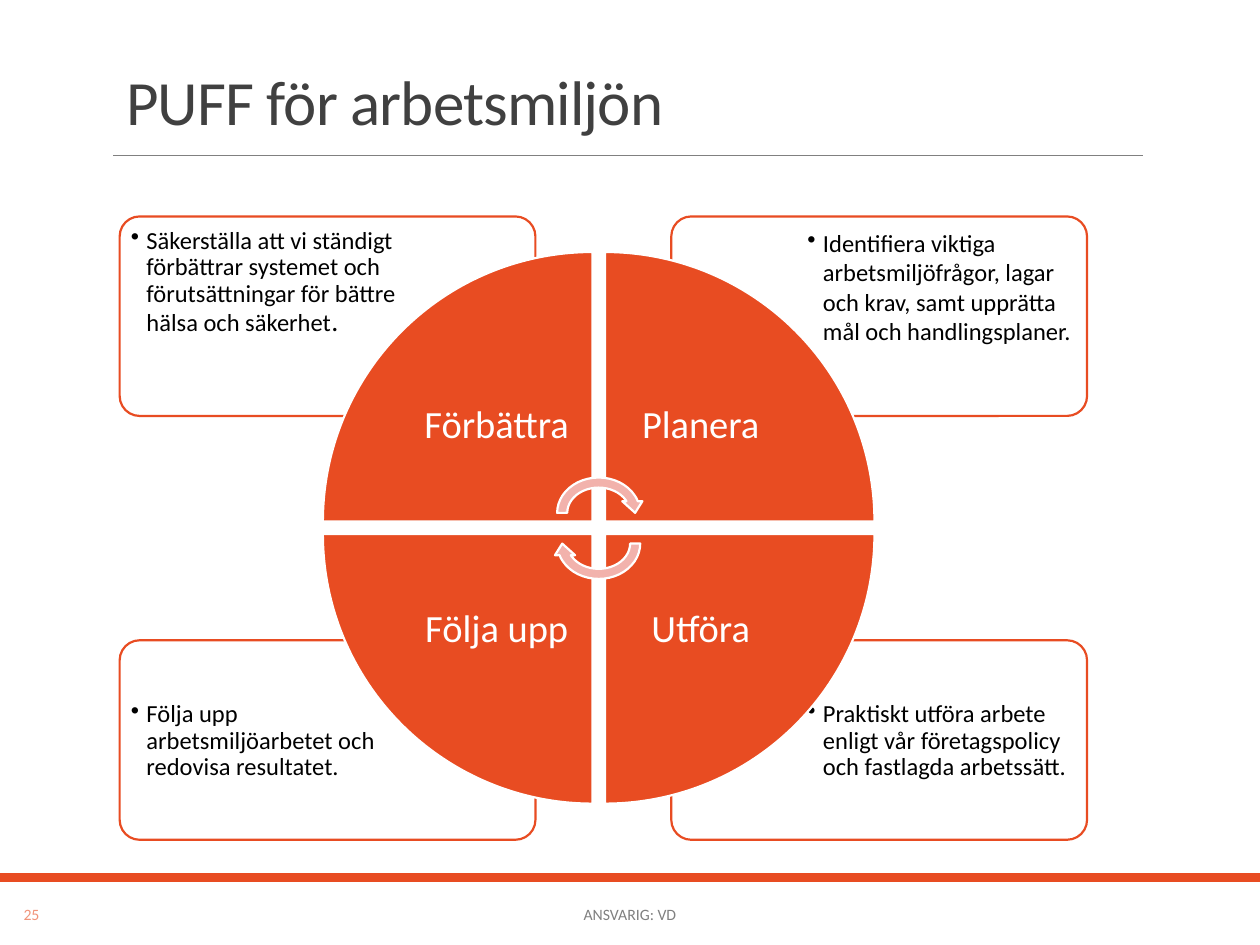
from lxml import etree
from pptx import Presentation
from pptx.dml.color import RGBColor
from pptx.enum import shapes, text
from pptx.oxml import ns
from pptx.util import Pt

ORANGE = RGBColor(0xE8, 0x4C, 0x22)
PEACH = RGBColor(0xF1, 0x94, 0x7A)
PINK = RGBColor(0xF2, 0xB2, 0xAC)
WHITE = RGBColor(0xFF, 0xFF, 0xFF)
BLACK = RGBColor(0, 0, 0)
DARK = RGBColor(0x40, 0x40, 0x40)
GREY = RGBColor(0x80, 0x80, 0x80)
FONT = "Calibri"
KIND = shapes.MSO_SHAPE
MIDDLE = text.MSO_ANCHOR.MIDDLE
CENTER = text.PP_ALIGN.CENTER

TITLE = "PUFF för arbetsmiljön"
# name, column, row, rotation, line spacing, runs of (words, size)
STEPS = [
    ("Förbättra", 0, 0, 0, 0.9,
     [("Säkerställa att vi ständigt förbättrar systemet och "
       "förutsättningar för bättre hälsa och säkerhet", 14), (".", 16)]),
    ("Planera", 1, 0, 90, 1.0,
     [("Identifiera viktiga arbetsmiljöfrågor, lagar och krav, "
       "samt upprätta mål och handlingsplaner.", 14)]),
    ("Utföra", 1, 1, 180, 0.9,
     [("Praktiskt utföra arbete enligt vår företagspolicy "
       "och fastlagda arbetssätt.", 14)]),
    ("Följa upp", 0, 1, 270, 0.9,
     [("Följa upp arbetsmiljöarbetet och redovisa resultatet.", 14)]),
]
FOOT = [("25", 2.9, 30.2, PEACH), ("ANSVARIG: VD", 217.4, 285.1, GREY)]

# Left or top edge for column or row 0 and 1
PANEL_X, PANEL_Y, PANEL_W, PANEL_H = (68.4, 383.6), (123.7, 365.9), 237.6, 114
NOTE_X, NOTE_Y, NOTE_W, NOTE_H = (70.6, 457.2), (126, 396.7), 161.3, 80.6
WEDGE_X, WEDGE_Y, WEDGE = (184.5, 345.7), (144, 305.2), 154
LABEL = 109.4


def add_shape(slide, kind, box, fill, line=None):
    shape = slide.shapes.add_shape(kind, *map(Pt, box))
    shape.shadow.inherit = False
    shape.fill.solid()
    shape.fill.fore_color.rgb = fill
    if line is None:
        shape.line.fill.background()
    else:
        shape.line.color.rgb = line
        shape.line.width = Pt(1.25)
    return shape


def style(run, size, color):
    run.font.name = FONT
    run.font.size = Pt(size)
    run.font.color.rgb = color


def add_text(slide, box, runs, color, inset, spacing=1.0):
    frame = slide.shapes.add_textbox(*map(Pt, box)).text_frame
    frame.word_wrap = True
    frame.margin_left = frame.margin_right = Pt(inset)
    frame.margin_top = frame.margin_bottom = Pt(inset)
    para = frame.paragraphs[0]
    para.line_spacing = spacing
    for words, size in runs:
        run = para.add_run()
        run.text = words
        style(run, size, color)
    return frame


def center(frame):
    frame.vertical_anchor = MIDDLE
    frame.paragraphs[0].alignment = CENTER


def add_bullet(para):
    props = para._p.get_or_add_pPr()
    props.set("marL", str(Pt(8.9)))
    props.set("indent", str(-Pt(8.9)))
    etree.SubElement(props, ns.qn("a:buChar")).set("char", "•")


def add_title(slide):
    title = slide.shapes.title
    title.left, title.top, title.width, title.height = map(
        Pt, (64.8, 22.3, 594, 60.5))
    frame = title.text_frame
    frame.text = TITLE
    frame.vertical_anchor = text.MSO_ANCHOR.BOTTOM
    para = frame.paragraphs[0]
    para.alignment = text.PP_ALIGN.LEFT
    para.line_spacing = 0.85
    run = para.runs[0]
    style(run, 36, DARK)
    run.font._element.set("spc", "-50")

    rule = slide.shapes.add_connector(
        shapes.MSO_CONNECTOR.STRAIGHT, *map(Pt, (64.8, 88.7, 653, 88.7)))
    rule.line.color.rgb = GREY
    rule.line.width = Pt(0.5)
    etree.SubElement(rule._element.spPr, ns.qn("a:effectLst"))


def add_panel(slide, col, row, runs, spacing):
    box = PANEL_X[col], PANEL_Y[row], PANEL_W, PANEL_H
    panel = add_shape(slide, KIND.ROUNDED_RECTANGLE, box, WHITE, ORANGE)
    panel.adjustments[0] = 0.1
    box = NOTE_X[col], NOTE_Y[row], NOTE_W, NOTE_H
    frame = add_text(slide, box, runs, BLACK, 4.2, spacing)
    add_bullet(frame.paragraphs[0])


def add_wedge(slide, name, col, row, turn):
    x, y = WEDGE_X[col], WEDGE_Y[row]
    wedge = add_shape(slide, KIND.PIE_WEDGE, (x, y, WEDGE, WEDGE),
                      ORANGE, WHITE)
    wedge.rotation = turn
    # The label sits in the corner nearest the centre of the circle
    shift = WEDGE - LABEL
    box = x + shift * (1 - col), y + shift * (1 - row), LABEL, LABEL
    center(add_text(slide, box, [(name, 22)], WHITE, 12.2, 0.9))


def main():
    deck = Presentation()
    deck.slide_width, deck.slide_height = Pt(720), Pt(540)
    slide = deck.slides.add_slide(deck.slide_layouts[5])
    add_shape(slide, KIND.RECTANGLE, (0, 499, 720, 5), ORANGE)
    add_title(slide)
    for name, col, row, turn, spacing, runs in STEPS:
        add_panel(slide, col, row, runs, spacing)
    for name, col, row, turn, spacing, runs in STEPS:
        add_wedge(slide, name, col, row, turn)
    for top, turn in ((270, 0), (287.5, 180)):
        arrow = add_shape(slide, KIND.CIRCULAR_ARROW,
                          (315.5, top, 53.2, 46.2), PINK, WHITE)
        arrow.rotation = turn
    for words, left, width, color in FOOT:
        box = left, 508.3, width, 28.8
        center(add_text(slide, box, [(words, 9)], color, 3.6))
    deck.save("out.pptx")


if __name__ == "__main__":
    main()
